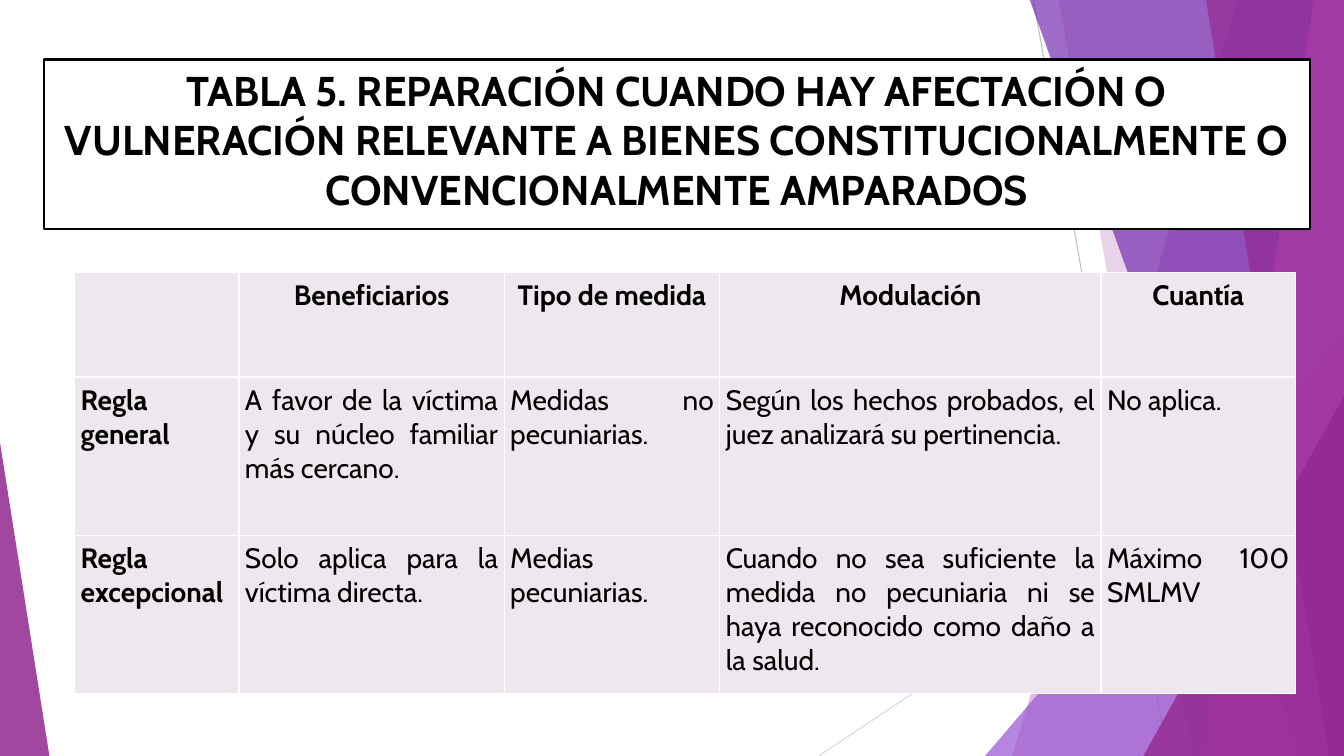
from dataclasses import dataclass

from lxml.etree import SubElement
from pptx import Presentation
from pptx.dml.color import RGBColor
from pptx.enum.shapes import MSO_CONNECTOR, MSO_SHAPE
from pptx.enum.text import MSO_ANCHOR, PP_ALIGN
from pptx.oxml.ns import qn
from pptx.util import Inches, Pt

WIDTH, HEIGHT = 13.33, 7.5
BAND_TOP = -0.01
FONT = "Cabin"
COLORS = {
    "black": "000000",
    "white": "FFFFFF",
    "gray": "BFBFBF",
    "light gray": "D9D9D9",
    "magenta": "92278F",
    "lilac": "9B57D3",
    "violet": "762EB1",
    "pink": "D665D3",
    "cell": "EEE8EE",
}


@dataclass(frozen=True)
class Ray:
    start: tuple[float, float]
    end: tuple[float, float]
    color: str


@dataclass(frozen=True)
class Band:
    """A full-height band from a slanted left edge to the right slide edge."""
    top_left: float
    bottom_left: float
    color: str
    opacity: int


@dataclass(frozen=True)
class Wedge:
    """A right triangle standing on the bottom slide edge."""
    left: float
    top: float
    width: float
    apex: float
    color: str
    opacity: int


RAYS = [
    Ray((10.25, 0), (11.58, HEIGHT), "gray"),
    Ray((WIDTH, 4.03), (8.12, HEIGHT), "light gray"),
]
FACETS = [
    Band(12.28, 10.04, "magenta", 30),
    Band(10.5, 11.83, "magenta", 20),
    Wedge(9.77, 3.33, 3.56, 1, "lilac", 72),
    Band(10.21, 12.91, "violet", 70),
    Band(13.03, 11.92, "pink", 70),
    Band(11.96, 13.18, "magenta", 65),
    Wedge(11.34, 3.93, 1.99, 1, "magenta", 80),
    Wedge(0, 4.39, 0.49, 0, "magenta", 85),
]
TITLE = (
    "TABLA 5. REPARACIÓN CUANDO HAY AFECTACIÓN O VULNERACIÓN RELEVANTE "
    "A BIENES CONSTITUCIONALMENTE O CONVENCIONALMENTE AMPARADOS"
)
COLUMN_WIDTHS = [1.63, 2.63, 2.14, 3.78, 1.93]
ROW_HEIGHTS = [1.04, 1.57, 1.57]
TABLE_ROWS = [
    ["", "Beneficiarios", "Tipo de medida", "Modulación", "Cuantía"],
    [
        "Regla general",
        "A favor de la víctima y su núcleo familiar más cercano.",
        "Medidas no pecuniarias.",
        "Según los hechos probados, el juez analizará su pertinencia.",
        "No aplica.",
    ],
    [
        "Regla excepcional",
        "Solo aplica para la víctima directa.",
        "Medias pecuniarias.",
        "Cuando no sea suficiente la medida no pecuniaria ni se haya "
        "reconocido como daño a la salud.",
        "Máximo 100 SMLMV",
    ],
]


def rgb(name: str) -> RGBColor:
    return RGBColor.from_string(COLORS[name])


def fill_solid(target, color: str) -> None:
    target.fill.solid()
    target.fill.fore_color.rgb = rgb(color)


def draw_ray(slide, ray: Ray) -> None:
    connector = slide.shapes.add_connector(
        MSO_CONNECTOR.STRAIGHT, *map(Inches, ray.start + ray.end)
    )
    connector.line.color.rgb = rgb(ray.color)
    connector.line.width = Pt(0.75)
    SubElement(connector._element.spPr, qn("a:effectLst"))


def draw_facet(slide, facet: Band | Wedge) -> None:
    if isinstance(facet, Band):
        builder = slide.shapes.build_freeform(
            Inches(facet.top_left), Inches(BAND_TOP)
        )
        corners = [(WIDTH, BAND_TOP), (WIDTH, HEIGHT), (facet.bottom_left, HEIGHT)]
        builder.add_line_segments([(Inches(x), Inches(y)) for x, y in corners])
        shape = builder.convert_to_shape()
    else:
        shape = slide.shapes.add_shape(
            MSO_SHAPE.ISOSCELES_TRIANGLE, Inches(facet.left), Inches(facet.top),
            Inches(facet.width), Inches(HEIGHT - facet.top),
        )
        shape.adjustments[0] = facet.apex
    shape.shadow.inherit = False
    shape.line.fill.background()
    fill_solid(shape, facet.color)
    color_element = shape._element.spPr.find(f".//{qn('a:srgbClr')}")
    SubElement(color_element, qn("a:alpha"), val=str(facet.opacity * 1000))


def write_text(text_frame, text: str, size: float, bold: bool, alignment) -> None:
    text_frame.text = text
    paragraph = text_frame.paragraphs[0]
    paragraph.alignment = alignment
    for run in paragraph.runs:
        run.font.name = FONT
        run.font.size = Pt(size)
        run.font.bold = bold
        run.font.color.rgb = rgb("black")


def draw_title(slide) -> None:
    shape = slide.shapes.add_shape(
        MSO_SHAPE.RECTANGLE, Inches(0.44), Inches(0.59), Inches(12.55), Inches(1.68)
    )
    shape.shadow.inherit = False
    fill_solid(shape, "white")
    shape.line.color.rgb = rgb("black")
    shape.line.width = Pt(1.5)
    shape.text_frame.word_wrap = True
    shape.text_frame.vertical_anchor = MSO_ANCHOR.TOP
    write_text(shape.text_frame, TITLE, 29.7, True, PP_ALIGN.CENTER)


def add_borders(cell) -> None:
    properties = cell._tc.get_or_add_tcPr()
    for side in ("lnL", "lnR", "lnT", "lnB"):
        border = SubElement(properties, qn(f"a:{side}"), w=str(Pt(1)))
        fill = SubElement(border, qn("a:solidFill"))
        SubElement(fill, qn("a:srgbClr"), val=COLORS["white"])


def draw_table(slide) -> None:
    table = slide.shapes.add_table(
        len(ROW_HEIGHTS), len(COLUMN_WIDTHS), Inches(0.74), Inches(2.7),
        Inches(sum(COLUMN_WIDTHS)), Inches(sum(ROW_HEIGHTS)),
    ).table
    table.first_row = table.horz_banding = False
    for column, width in zip(table.columns, COLUMN_WIDTHS):
        column.width = Inches(width)
    for row, height in zip(table.rows, ROW_HEIGHTS):
        row.height = Inches(height)
    for row_index, texts in enumerate(TABLE_ROWS):
        for column_index, text in enumerate(texts):
            cell = table.cell(row_index, column_index)
            add_borders(cell)
            fill_solid(cell, "cell")
            cell.margin_left = cell.margin_right = Inches(0.06)
            cell.margin_top = cell.margin_bottom = Inches(0.06)
            is_header = row_index == 0
            alignment = PP_ALIGN.CENTER if is_header else PP_ALIGN.JUSTIFY
            bold = is_header or column_index == 0
            write_text(cell.text_frame, text, 20, bold, alignment)
            cell.text_frame.paragraphs[0].space_after = Pt(8)


def main() -> None:
    presentation = Presentation()
    presentation.slide_width = Inches(WIDTH)
    presentation.slide_height = Inches(HEIGHT)
    slide = presentation.slides.add_slide(presentation.slide_layouts[6])
    for ray in RAYS:
        draw_ray(slide, ray)
    for facet in FACETS:
        draw_facet(slide, facet)
    draw_title(slide)
    draw_table(slide)
    presentation.save("out.pptx")


if __name__ == "__main__":
    main()
